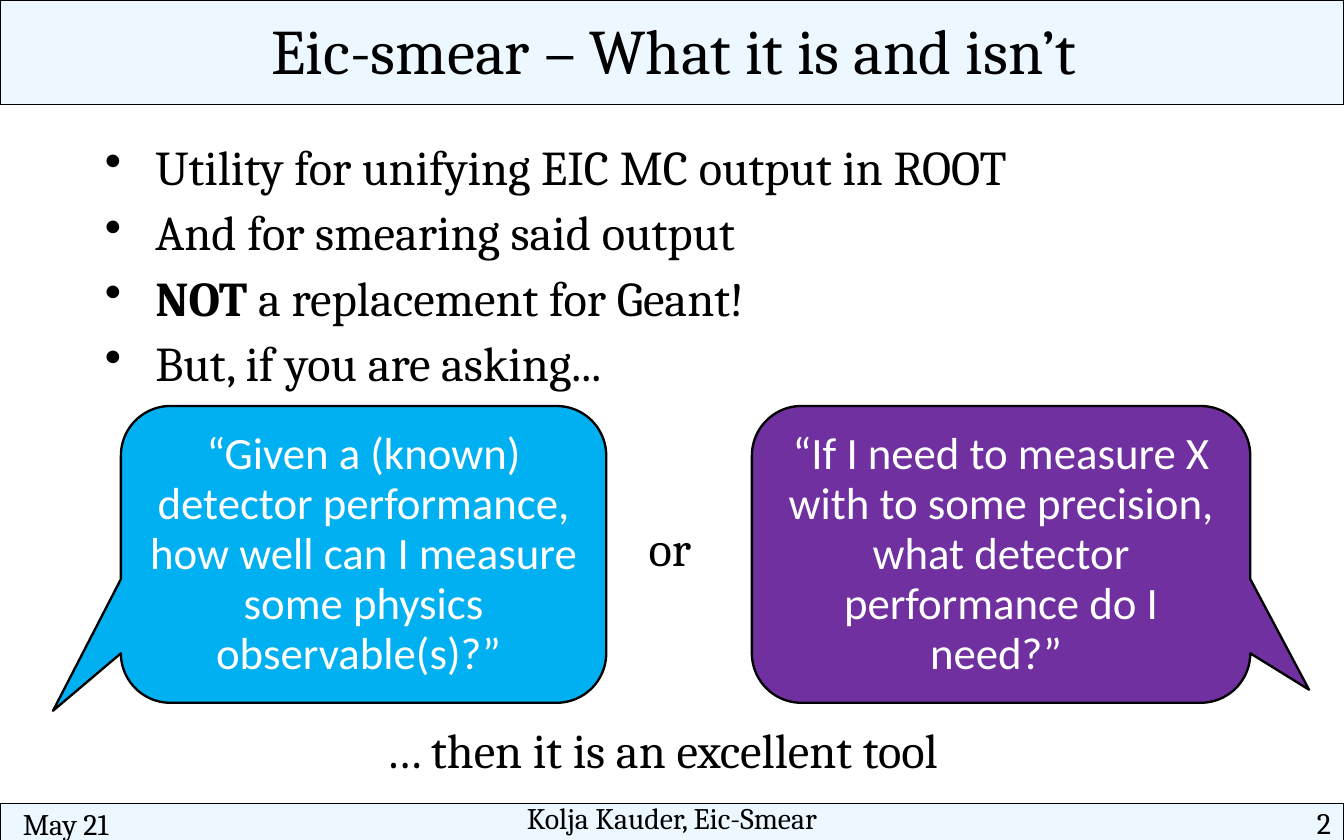
import pptx
import pptx.util
import pptx.dml.color
import pptx.enum.shapes
import pptx.enum.text
import pptx.oxml.ns
import lxml.etree

Pt = pptx.util.Pt
Kind = pptx.enum.shapes.MSO_SHAPE
Align = pptx.enum.text.PP_ALIGN
Anchor = pptx.enum.text.MSO_ANCHOR
WIDE, HIGH = 720, 450
BLACK, WHITE, PALE = "000000", "FFFFFF", "EDF7FF"


def tint(code):
    return pptx.dml.color.RGBColor.from_string(code)


def write(frame, paras, size=26, font="Cambria", color=BLACK, align=Align.LEFT,
          space=0.93, after=0, pad=(7.2, 3.6, 7.2, 3.6), wrap=True,
          anchor=Anchor.TOP, bullet=None, indent=0):
    """Fill a frame; each paragraph is a list of (text, bold) runs."""
    frame.word_wrap = wrap
    frame.vertical_anchor = anchor
    (frame.margin_left, frame.margin_top,
     frame.margin_right, frame.margin_bottom) = map(Pt, pad)
    for num, runs in enumerate(paras):
        para = frame.add_paragraph() if num else frame.paragraphs[0]
        para.alignment = align
        para.line_spacing = space
        para.space_after = Pt(after)
        for text, bold in runs:
            run = para.add_run()
            run.text = text
            run.font.name, run.font.size, run.font.bold = font, Pt(size), bold
            run.font.color.rgb = tint(color)
        if bullet:
            props = para._p.get_or_add_pPr()
            props.set("marL", str(Pt(indent)))
            props.set("indent", str(-Pt(indent)))
            mark = lxml.etree.SubElement(props, pptx.oxml.ns.qn("a:buChar"))
            mark.set("char", bullet)


def label(slide, box, text, **form):
    area = slide.shapes.add_textbox(*map(Pt, box))
    write(area.text_frame, [[(text, False)]], **form)


def shape(slide, kind, box, fill, width, adjust):
    item = slide.shapes.add_shape(kind, *map(Pt, box))
    item.shadow.inherit = False
    item.fill.solid()
    item.fill.fore_color.rgb = tint(fill)
    item.line.color.rgb = tint(BLACK)
    item.line.width = Pt(width)
    for num, value in enumerate(adjust):
        item.adjustments[num] = value
    return item


def header(slide, box, text):
    left, top, wide, high = box
    shape(slide, Kind.ROUNDED_RECTANGLE, box, PALE, 0.75, [0])
    label(slide, (left + 12, top + 4.3, wide - 21.6, high - 14.2), text, size=34,
          align=Align.CENTER, space=0.92, pad=(5.8, 5.8, 5.8, 2.9), wrap=False)


def footer(slide, box, date, name, page):
    left, top, wide, high = box
    shape(slide, Kind.ROUNDED_RECTANGLE, box, PALE, 0.75, [0])
    # Date, name and page number: offset, drop, width, alignment, spacing
    parts = [(date, 12.2, -1.3, 168, Align.LEFT, 1.12),
             (name, 150.5, 0, 419, Align.CENTER, 0.92),
             (page, 545, 2.2, 168, Align.RIGHT, 0.92)]
    for text, shift, drop, span, align, space in parts:
        label(slide, (left + shift, top + drop, span, 31), text, size=16,
              align=align, space=space, pad=(0, 0, 0, 0))


def points(slide, box, paras):
    area = slide.shapes.add_textbox(*map(Pt, box))
    write(area.text_frame, paras, after=6, pad=(5.8, 2.9, 5.8, 2.9),
          bullet="•", indent=27)


def bubble(slide, box, text, fill, tip):
    item = shape(slide, Kind.ROUNDED_RECTANGULAR_CALLOUT, box, fill, 1.25,
                 [*tip, 0.167])
    write(item.text_frame, [[(text, False)]], size=24, font="Calibri",
          color=WHITE, align=Align.CENTER, anchor=Anchor.MIDDLE)


def choice(slide, box):
    """Two questions, the word between them and the line that ends them."""
    left, top, wide, high = box
    bubble(slide, (left, top, 260, high),
           "“Given a (known) detector performance, how well can I measure "
           "some physics observable(s)?” ", "00B0F0", (-0.64, 0.527))
    bubble(slide, (left + wide - 267, top, 267, high),
           "“If I need to measure X with to some precision, what detector "
           "performance do I need?” ", "7030A0", (0.618, 0.456))
    label(slide, (left + 275.6, top + 59, 39.6, 36.7), "or", wrap=False)
    label(slide, (left + 134.6, top + high + 8.6, 342.7, 36.7),
          "… then it is an excellent tool", wrap=False)


def main():
    deck = pptx.Presentation()
    deck.slide_width, deck.slide_height = Pt(WIDE), Pt(HIGH)
    slide = deck.slides.add_slide(deck.slide_layouts[6])

    # Bands
    footer(slide, (0, 430.5, WIDE, 19.9), "May 21", "Kolja Kauder, Eic-Smear", "2")
    header(slide, (0, 0, WIDE, 56), "Eic-smear – What it is and isn’t")

    # Body
    points(slide, (50.4, 73.4, 640.8, 177),
           [[("Utility for unifying EIC MC output in ROOT", False)],
            [("And for smearing said output", False)],
            [("NOT", True), (" a replacement for Geant!", False)],
            [("But, if you are asking...", False)]])
    choice(slide, (64.8, 217.5, 605, 159))

    deck.save("out.pptx")


if __name__ == "__main__":
    main()
